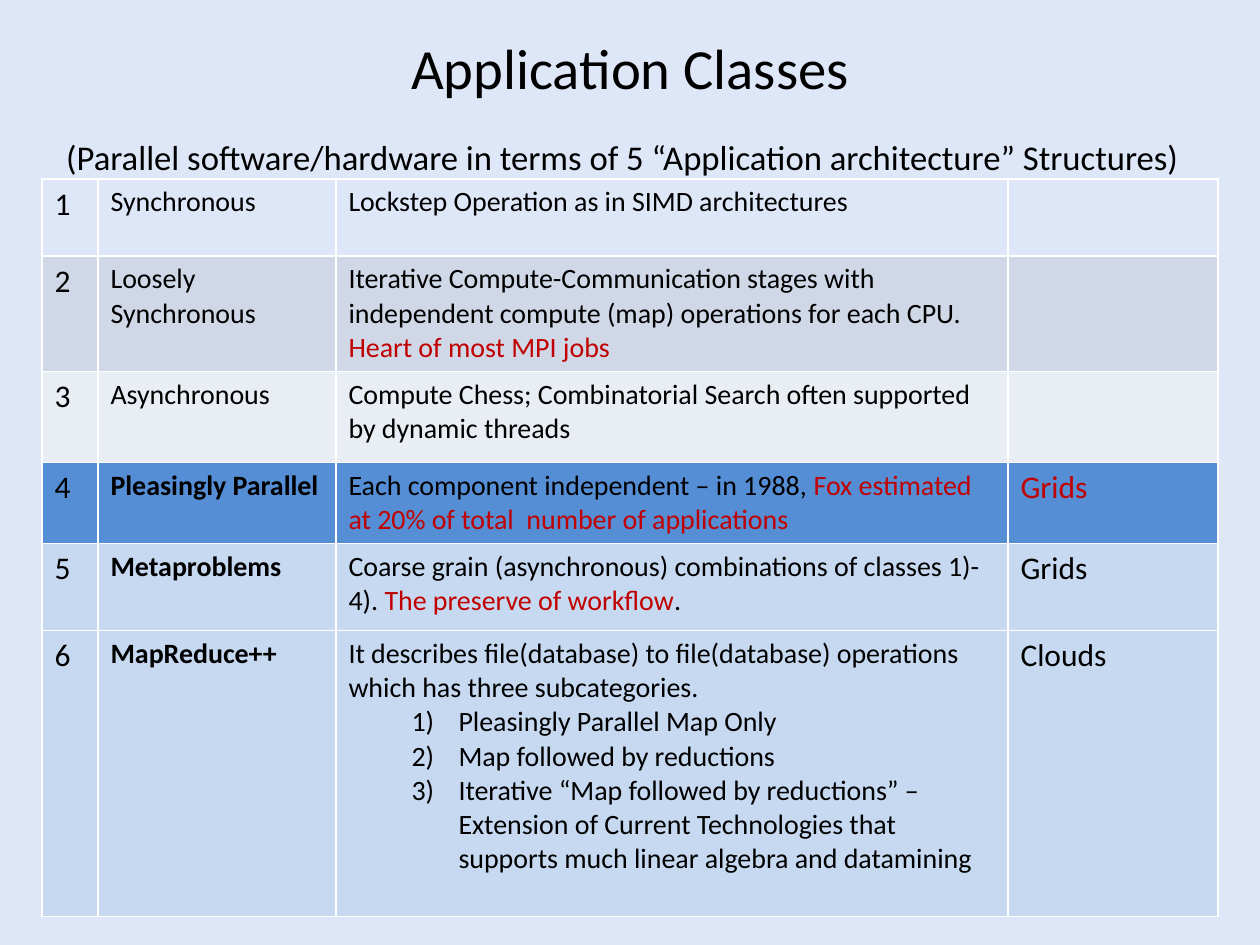
from lxml.etree import SubElement
from pptx import Presentation
from pptx.dml.color import RGBColor
from pptx.enum.text import MSO_ANCHOR, PP_ALIGN
from pptx.oxml.ns import qn
from pptx.util import Emu, Pt

BLACK = RGBColor(0x00, 0x00, 0x00)
RED = RGBColor(0xC0, 0x00, 0x00)
PALE = RGBColor(0xDE, 0xE7, 0xF8)
GREY = RGBColor(0xD0, 0xD8, 0xE8)
LIGHT = RGBColor(0xE9, 0xED, 0xF4)
STRONG = RGBColor(0x55, 0x8E, 0xD5)
SOFT = RGBColor(0xC6, 0xD9, 0xF1)


def px(count):
    return Emu(round(count * 914400 / 126))


def add_span(para, text, size, color=BLACK, bold=False):
    span = para.add_run()
    span.text = text
    span.font.color.rgb = color
    formats = {"name": "Calibri", "size": Pt(size), "bold": bold}
    for name, value in formats.items():
        setattr(span.font, name, value)


deck = Presentation()
deck.slide_width, deck.slide_height = px(1260), px(945)
page = deck.slides.add_slide(deck.slide_layouts[5])
page.background.fill.solid()
page.background.fill.fore_color.rgb = PALE

title = page.shapes.title
for name, value in {"left": 0, "top": 38, "width": 1260, "height": 141}.items():
    setattr(title, name, px(value))
title.text_frame.vertical_anchor = MSO_ANCHOR.MIDDLE
para = title.text_frame.paragraphs[0]
para.alignment = PP_ALIGN.CENTER
add_span(para, "Application Classes", 32.4)
para.add_line_break()
add_span(para, "(Parallel software/hardware in terms of 5 “Application architecture” Structures)", 19.8)
add_span(para, " ", 39.6)

classes = [
    (PALE, 77, "Synchronous",
     [("Lockstep Operation as in SIMD architectures", BLACK)], "", BLACK),
    (GREY, 115, "Loosely Synchronous",
     [("Iterative Compute-Communication stages with independent compute (map) "
       "operations for each CPU. ", BLACK),
      ("Heart of most MPI jobs", RED)], "", BLACK),
    (LIGHT, 91, "Asynchronous",
     [("Compute Chess; Combinatorial Search often supported by dynamic threads", BLACK)],
     "", BLACK),
    (STRONG, 81, "Pleasingly Parallel",
     [("Each component independent – in 1988, ", BLACK),
      ("Fox estimated at 20% of total  number of applications", RED)], "Grids", RED),
    (SOFT, 87, "Metaproblems",
     [("Coarse grain (asynchronous) combinations of classes 1)-4). ", BLACK),
      ("The preserve of workflow", RED), (".", BLACK)], "Grids", BLACK),
    (SOFT, 286, "MapReduce++",
     [("It describes file(database) to file(database) operations which has three "
       "subcategories.", BLACK)], "Clouds", BLACK),
]
subcategories = [
    "Pleasingly Parallel Map Only",
    "Map followed by reductions",
    "Iterative “Map followed by reductions” – Extension of Current Technologies that "
    "supports much linear algebra and datamining",
]

table = page.shapes.add_table(len(classes), 4, px(42), px(179), px(1176), px(737)).table
table.first_row = table.horz_banding = False
for column, width in zip(table.columns, [56, 238, 672, 210]):
    column.width = px(width)

for number, (fill, height, label, details, platform, platform_color) in enumerate(classes, 1):
    row = table.rows[number - 1]
    row.height = px(height)
    columns = [
        ([(str(number), BLACK)], 18, False),
        ([(label, BLACK)], 16, number > 3),
        (details, 16, False),
        ([(platform, platform_color)] if platform else [], 18, False),
    ]
    for cell, (spans, size, bold) in zip(row.cells, columns):
        para = cell.text_frame.paragraphs[0]
        para.font.size = Pt(size)
        for text, color in spans:
            add_span(para, text, size, color, bold)
        props = cell._tc.get_or_add_tcPr()
        for side in ("a:lnL", "a:lnR", "a:lnT", "a:lnB"):
            line = SubElement(props, qn(side), w=str(Pt(1)))
            SubElement(SubElement(line, qn("a:solidFill")), qn("a:srgbClr"), val="FFFFFF")
        cell.fill.solid()
        cell.fill.fore_color.rgb = fill

details_frame = table.cell(5, 2).text_frame
for text in subcategories:
    para = details_frame.add_paragraph()
    para.level = 1
    props = para._p.get_or_add_pPr()
    props.set("marL", str(px(110)))
    props.set("indent", str(-px(47)))
    SubElement(props, qn("a:buFont"), typeface="+mj-lt")
    SubElement(props, qn("a:buAutoNum"), type="arabicParenR")
    add_span(para, text, 16)

deck.save("out.pptx")
